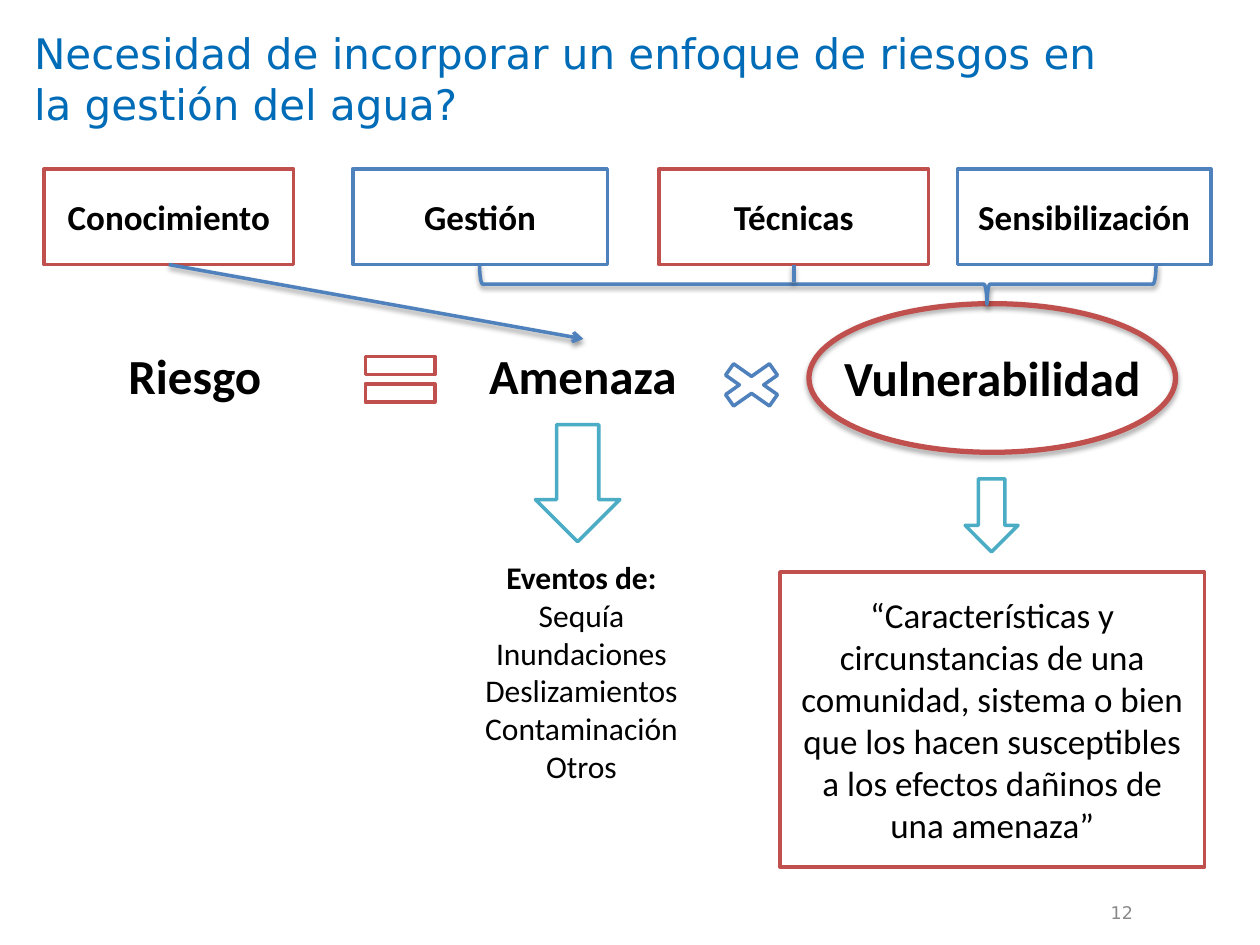
from lxml import etree
from pptx import Presentation
from pptx.dml.color import RGBColor
from pptx.enum.shapes import MSO_CONNECTOR, MSO_SHAPE
from pptx.enum.text import MSO_ANCHOR, PP_ALIGN
from pptx.oxml.ns import qn
from pptx.util import Emu, Pt

PX = 9144  # 100 px to the inch
RECT, ELLIPSE = MSO_SHAPE.RECTANGLE, MSO_SHAPE.OVAL
DOWN_ARROW, BRACE = MSO_SHAPE.DOWN_ARROW, MSO_SHAPE.RIGHT_BRACE
EQUAL, MULTIPLY = MSO_SHAPE.MATH_EQUAL, MSO_SHAPE.MATH_MULTIPLY
STRAIGHT = MSO_CONNECTOR.STRAIGHT
TOP, MIDDLE = MSO_ANCHOR.TOP, MSO_ANCHOR.MIDDLE
LEFT, CENTER, RIGHT = PP_ALIGN.LEFT, PP_ALIGN.CENTER, PP_ALIGN.RIGHT
BOTTOM_SIDE = 2

COLORS = {
    "title": "006CB7", "blue": "4F81BD", "red": "C0504D", "teal": "4BACC6",
    "white": "FFFFFF", "black": "000000", "gray": "898989",
}
# Shadows: colour, opacity %, blur pt, distance pt, direction in degrees
SOFT = ("black", 35, 3.1, 1.8, 90)
LINE_SOFT = ("black", 38, 3.1, 1.6, 90)


def px(*values):
    return [Emu(value * PX) for value in values]


def color(name):
    return RGBColor.from_string(COLORS[name])


def write(frame, text, size=20, font="Calibri", ink="black", bold=False,
          bold_first=False, align=CENTER, anchor=TOP):
    frame.word_wrap = True
    frame.vertical_anchor = anchor
    for index, line in enumerate(text.split("\n")):
        para = frame.add_paragraph() if index else frame.paragraphs[0]
        para.alignment = align
        span = para.add_run()
        span.text = line
        span.font.name, span.font.size = font, Pt(size)
        span.font.bold = bold or (bold_first and index == 0)
        span.font.color.rgb = color(ink)


def set_shadow(properties, shadow):
    effects = properties.find(qn("a:effectLst"))
    if effects is None:
        effects = etree.SubElement(properties, qn("a:effectLst"))
    if shadow:
        name, opacity, blur, distance, angle = shadow
        outer = etree.SubElement(
            effects, qn("a:outerShdw"), blurRad=str(int(Pt(blur))),
            dist=str(int(Pt(distance))), dir=str(angle * 60000),
            algn="ctr", rotWithShape="0")
        tint = etree.SubElement(outer, qn("a:srgbClr"), val=COLORS[name])
        etree.SubElement(tint, qn("a:alpha"), val=str(opacity * 1000))


class Board:
    def __init__(self, page, heading_font="DejaVu Sans"):
        self.shapes = page.shapes
        self.heading_font = heading_font

    def title(self, area, text):
        title = self.shapes.title
        title.left, title.top, title.width, title.height = px(*area)
        write(title.text_frame, text, size=24, font=self.heading_font,
              ink="title", align=LEFT)

    def text(self, area, text, **style):
        box = self.shapes.add_textbox(*px(*area))
        write(box.text_frame, text, **style)

    def shape(self, kind, area, line, fill="white", width=2, shadow=None):
        shape = self.shapes.add_shape(kind, *px(*area))
        shape.shadow.inherit = False
        if fill:
            shape.fill.solid()
            shape.fill.fore_color.rgb = color(fill)
        else:
            shape.fill.background()
        shape.line.color.rgb = color(line)
        shape.line.width = Pt(width)
        set_shadow(shape._element.spPr, shadow)
        return shape

    def card(self, area, line, text, **style):
        card = self.shape(RECT, area, line)
        write(card.text_frame, text, anchor=MIDDLE, **style)
        return card

    def line_from(self, card, end, arrow=False):
        line = self.shapes.add_connector(STRAIGHT, *px(0, 0, *end))
        line.begin_connect(card, BOTTOM_SIDE)
        line.line.color.rgb = color("blue")
        line.line.width = Pt(2)
        if arrow:
            etree.SubElement(line.line._get_or_add_ln(), qn("a:tailEnd"),
                             type="arrow")
        set_shadow(line._element.spPr, LINE_SOFT)


def main():
    deck = Presentation()
    deck.slide_width, deck.slide_height = px(1000, 750)
    board = Board(deck.slides.add_slide(deck.slide_layouts[5]))

    # Title and page number
    board.title((17, 17, 893, 98), "Necesidad de incorporar un enfoque de "
                "riesgos en la gestión del agua?")
    board.text((676, 714, 233, 21), "12", size=10, font=board.heading_font,
               ink="gray", align=RIGHT, anchor=MIDDLE)

    # Risk equation
    for area, term in (((10, 269, 289, 57), "Riesgo"),
                       ((350, 269, 225, 57), "Amenaza"),
                       ((642, 271, 291, 57), "Vulnerabilidad")):
        board.text(area, term, size=28, bold=True)
    board.shape(EQUAL, (280, 270, 75, 62), "red")
    board.shape(MULTIPLY, (563, 282, 67, 47), "blue")
    board.shape(ELLIPSE, (642, 241, 291, 118), "red", fill=None, width=3,
                shadow=SOFT)

    # Explanations under the terms
    board.shape(DOWN_ARROW, (425, 337, 67, 93), "teal")
    board.text((341, 438, 241, 192),
               "Eventos de:\nSequía\nInundaciones\nDeslizamientos\n"
               "Contaminación\nOtros", size=18, bold_first=True)
    board.shape(DOWN_ARROW, (766, 380, 42, 58), "teal")
    board.card((619, 454, 337, 234), "red",
               "“Características y circunstancias de una comunidad, sistema "
               "o bien que los hacen susceptibles a los efectos dañinos de "
               "una amenaza”")

    # Fields of action
    cards = {}
    for left, width, line, name in ((35, 198, "red", "Conocimiento"),
                                    (280, 202, "blue", "Gestión"),
                                    (523, 214, "red", "Técnicas"),
                                    (760, 201, "blue", "Sensibilización")):
        cards[name] = board.card((left, 134, width, 76), line, name, bold=True)

    # Links from the fields to the terms
    board.line_from(cards["Conocimiento"], (463, 269), arrow=True)
    brace = board.shape(BRACE, (633, -43, 32, 537), "blue", fill=None,
                        shadow=LINE_SOFT)
    brace.rotation = 90
    brace.adjustments[0], brace.adjustments[1] = 0.08, 0.25
    board.line_from(cards["Técnicas"], (630, 224))

    deck.save("out.pptx")


if __name__ == "__main__":
    main()
